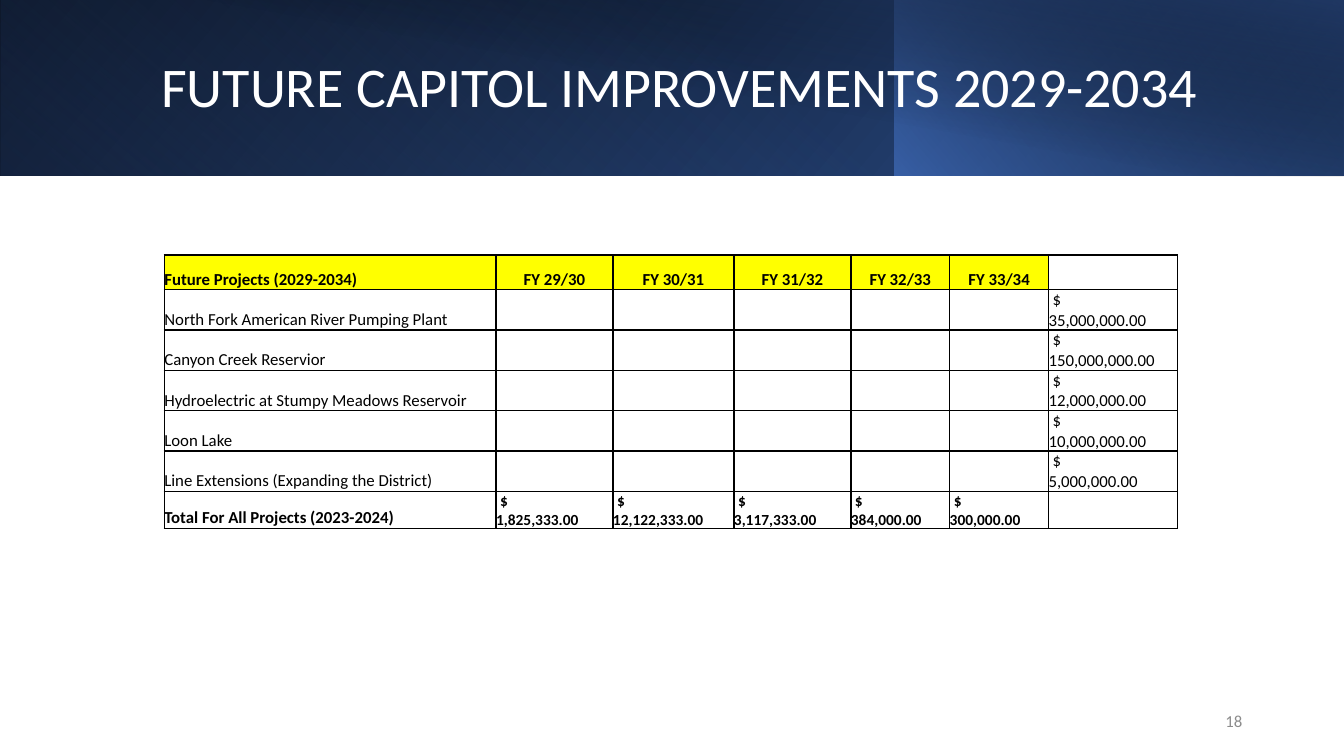
from lxml import etree
from pptx import Presentation
from pptx.dml.color import RGBColor
from pptx.enum.shapes import MSO_SHAPE as Shape
from pptx.enum.text import MSO_ANCHOR as Anchor, PP_ALIGN as Align
from pptx.oxml import parse_xml
from pptx.oxml.ns import qn
from pptx.util import Inches, Pt

# Content
TITLE = "FUTURE CAPITOL IMPROVEMENTS 2029-2034"
PAGE = "18"
HEAD = ["Future Projects (2029-2034)", "FY 29/30", "FY 30/31",
        "FY 31/32", "FY 32/33", "FY 33/34"]
COSTS = [
    ("North Fork American River Pumping Plant", "35,000,000.00"),
    ("Canyon Creek Reservior", "150,000,000.00"),
    ("Hydroelectric at Stumpy Meadows Reservoir", "12,000,000.00"),
    ("Loon Lake", "10,000,000.00"),
    ("Line Extensions (Expanding the District)", "5,000,000.00"),
]
TOTAL = ["Total For All Projects (2023-2024)", "1,825,333.00",
         "12,122,333.00", "3,117,333.00", "384,000.00", "300,000.00"]
WIDTHS = [3.29, 1.16, 1.2, 1.16, 0.98, 0.98, 1.28]
ROW = 2.06 / 6
FONT = "Calibri"
INK = "000000"

# Banner layers: box, turn, flip, angle, stops (place, colour, opacity)
BANNER = [
    ((0, 0, 13.33, 1.74), 0, True, 140,
     [(0, "000000", 100), (100, "2F5597", 100)]),
    ((0, 0, 8.88, 1.74), 180, True, 230,
     [(20, "4472C4", 0), (100, "203864", 55)]),
    ((8.87, 0, 4.46, 1.74), 0, True, 220,
     [(0, "4472C4", 66), (100, "000000", 30)]),
    ((0.5, 0, 12.83, 1.75), 0, False, 280,
     [(50, "000000", 0), (99, "203864", 52)]),
]
NS = 'xmlns:a="http://schemas.openxmlformats.org/drawingml/2006/main"'


def color(code):
    return RGBColor.from_string(code)


def add_run(para, text, size, code=INK, bold=False):
    run = para.add_run()
    run.text = text
    font = run.font
    font.name, font.size, font.bold = FONT, Pt(size), bold
    font.color.rgb = color(code)


def add_layer(slide, box, turn, flip, angle, stops):
    rect = slide.shapes.add_shape(Shape.RECTANGLE, *map(Inches, box))
    rect.shadow.inherit = False
    rect.line.fill.background()
    rect.rotation = turn
    props = rect.element.spPr
    if flip:
        props.find(qn("a:xfrm")).set("flipH", "1")
    marks = "".join(
        f'<a:gs pos="{place * 1000}"><a:srgbClr val="{code}">'
        f'<a:alpha val="{part * 1000}"/></a:srgbClr></a:gs>'
        for place, code, part in stops)
    fill = parse_xml(f'<a:gradFill {NS} rotWithShape="1"><a:gsLst>{marks}'
                     f'</a:gsLst><a:lin ang="{angle * 60000}" scaled="0"/>'
                     '</a:gradFill>')
    props.find(qn("a:prstGeom")).addnext(fill)


def add_label(slide, box, text, size, code, align):
    frame = slide.shapes.add_textbox(*map(Inches, box)).text_frame
    frame.word_wrap = True
    frame.vertical_anchor = Anchor.MIDDLE
    para = frame.paragraphs[0]
    para.alignment = align
    add_run(para, text, size, code)
    return para


def set_cell(cell, fill=None):
    cell.margin_left = cell.margin_right = 0
    cell.margin_top = cell.margin_bottom = 0
    cell.vertical_anchor = Anchor.BOTTOM
    props = cell._tc.get_or_add_tcPr()
    for side in ("lnL", "lnR", "lnT", "lnB"):
        props.append(parse_xml(
            f'<a:{side} {NS} w="12700"><a:solidFill><a:srgbClr val="{INK}"/>'
            f'</a:solidFill></a:{side}>'))
    if fill:
        cell.fill.solid()
        cell.fill.fore_color.rgb = color(fill)
    else:
        cell.fill.background()
    # Small end mark keeps empty rows low
    para = cell.text_frame.paragraphs[0]
    end = etree.SubElement(para._p, qn("a:endParaRPr"))
    end.set("sz", "1200")
    return para


def indent(para, tab=None):
    props = para._p.get_or_add_pPr()
    props.set("marL", "0")
    props.set("indent", str(Inches(0.04)))
    if tab:
        stops = etree.SubElement(props, qn("a:tabLst"))
        etree.SubElement(stops, qn("a:tab"), pos=str(Inches(tab)), algn="r")


def add_grid(slide):
    rows, cols = len(COSTS) + 2, len(WIDTHS)
    table = slide.shapes.add_table(
        rows, cols, Inches(1.63), Inches(2.53),
        Inches(sum(WIDTHS)), Inches(ROW * rows)).table
    table.first_row = table.horz_banding = False
    for col, width in zip(table.columns, WIDTHS):
        col.width = Inches(width)
    for row in table.rows:
        row.height = Inches(ROW)
    paras = [[set_cell(table.cell(r, c),
                       "FFFF00" if r == 0 and c < len(HEAD) else None)
              for c in range(cols)] for r in range(rows)]

    # Head row
    for c, text in enumerate(HEAD):
        paras[0][c].alignment = Align.CENTER if c else Align.LEFT
        add_run(paras[0][c], text, 12, bold=True)

    # Project costs
    for line, (name, cost) in zip(paras[1:], COSTS):
        add_run(line[0], name, 12)
        indent(line[-1], 1.2)
        add_run(line[-1], "$\t" + cost, 12)

    # Totals, with the sign on its own line
    add_run(paras[-1][0], TOTAL[0], 12, bold=True)
    for para, cost in zip(paras[-1][1:], TOTAL[1:]):
        indent(para)
        add_run(para, "$", 11, bold=True)
        para.add_line_break()
        add_run(para, cost, 11, bold=True)


def main():
    prs = Presentation()
    prs.slide_width, prs.slide_height = Inches(13.33), Inches(7.5)
    slide = prs.slides.add_slide(prs.slide_layouts[6])
    for layer in BANNER:
        add_layer(slide, *layer)
    title = add_label(slide, (1.5, 0.32, 10.82, 1.13), TITLE, 40,
                      "FFFFFF", Align.LEFT)
    title.line_spacing = 0.9
    add_grid(slide)
    add_label(slide, (9.42, 6.95, 3, 0.4), PAGE, 12, "8C8C8C", Align.RIGHT)
    prs.save("out.pptx")


if __name__ == "__main__":
    main()
